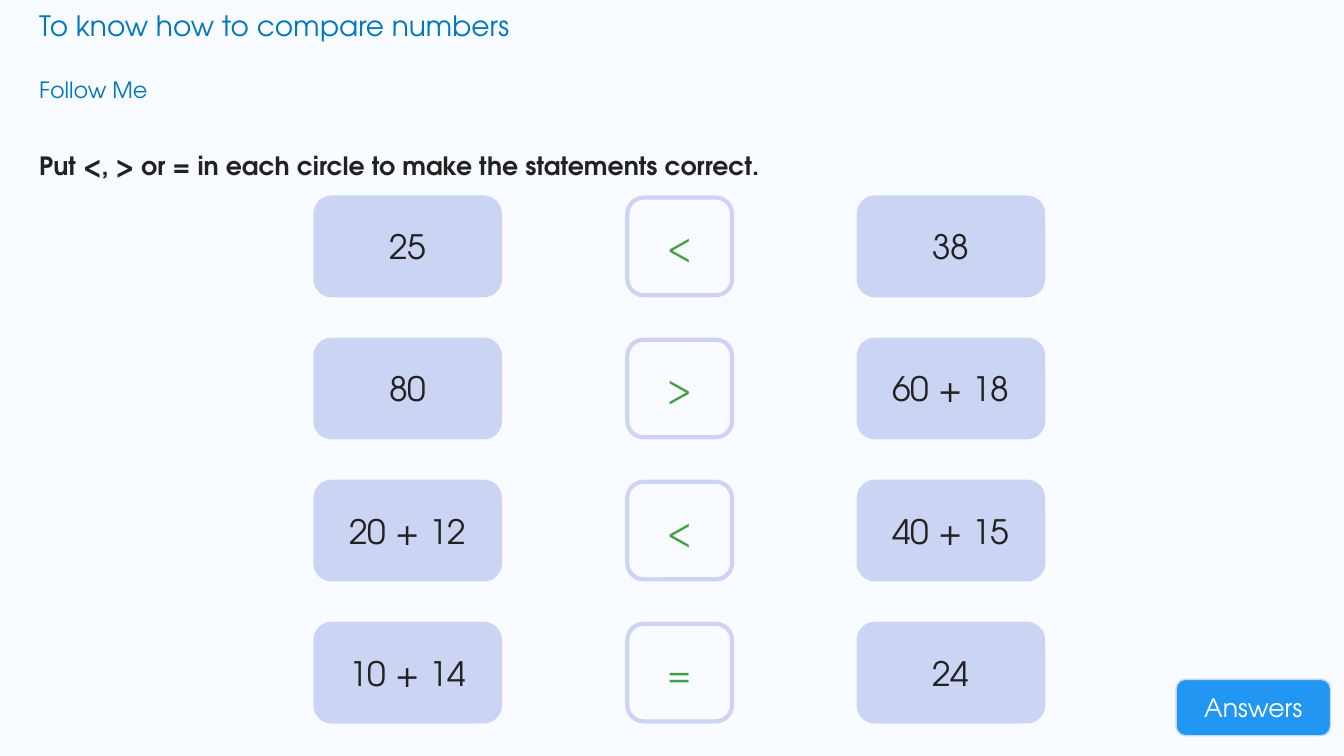
import dataclasses

import pptx
import pptx.dml.color
import pptx.enum.shapes
import pptx.enum.text
import pptx.util
from pptx.util import Cm


@dataclasses.dataclass(frozen=True)
class Theme:
    font: str = "TeX Gyre Adventor"
    background: str = "F8FBFF"
    heading: str = "0277BD"
    ink: str = "222222"
    card: str = "CCD4F4"
    sign: str = "43A047"
    button: str = "2196F3"
    button_text: str = "FFFFFF"
    title_size: int = 20
    subtitle_size: int = 16
    body_size: int = 18
    card_size: int = 24


THEME = Theme()
STATEMENTS = [
    ("25", "<", "38"),
    ("80", ">", "60 + 18"),
    ("20 + 12", "<", "40 + 15"),
    ("10 + 14", "=", "24"),
]
GRID_TOP, ROW_STEP, CARD_HEIGHT = 4.98, 3.58, 2.46
LEFT_X, SIGN_X, RIGHT_X = 7.95, 15.81, 21.64
CARD_WIDTH, SIGN_WIDTH = 4.65, 2.64
TEXT_LEFT = 0.74


def rgb(color):
    return pptx.dml.color.RGBColor.from_string(color)


def write_text(shape, text, *, size, color, bold=False, centered=False, line_spacing=None):
    """Fill a shape with one formatted paragraph."""
    frame = shape.text_frame
    frame.word_wrap = True
    anchors = pptx.enum.text.MSO_ANCHOR
    frame.vertical_anchor = anchors.MIDDLE if centered else anchors.TOP
    paragraph = frame.paragraphs[0]
    alignments = pptx.enum.text.PP_ALIGN
    paragraph.alignment = alignments.CENTER if centered else alignments.LEFT
    if line_spacing:
        paragraph.line_spacing = line_spacing
    run = paragraph.add_run()
    run.text = text
    run.font.name = THEME.font
    run.font.size = pptx.util.Pt(size)
    run.font.bold = bold
    run.font.color.rgb = rgb(color)


def add_label(slide, text, top, width, height, **text_format):
    box = slide.shapes.add_textbox(Cm(TEXT_LEFT), Cm(top), Cm(width), Cm(height))
    write_text(box, text, **text_format)


def add_card(slide, text, left, top, width, height, *, fill=None, line_width=3, **text_format):
    """Add a rounded box with centred text; without a fill it is an outline."""
    card = slide.shapes.add_shape(
        pptx.enum.shapes.MSO_SHAPE.ROUNDED_RECTANGLE,
        Cm(left), Cm(top), Cm(width), Cm(height),
    )
    card.shadow.inherit = False
    if fill:
        card.fill.solid()
        card.fill.fore_color.rgb = rgb(fill)
    else:
        card.fill.background()
    card.line.color.rgb = rgb(THEME.card)
    card.line.width = pptx.util.Pt(line_width)
    write_text(card, text, centered=True, **text_format)


def add_statement(slide, row, left_text, sign, right_text):
    top = GRID_TOP + row * ROW_STEP
    for text, left in ((left_text, LEFT_X), (right_text, RIGHT_X)):
        add_card(slide, text, left, top, CARD_WIDTH, CARD_HEIGHT,
                 fill=THEME.card, size=THEME.card_size, color=THEME.ink)
    add_card(slide, sign, SIGN_X, top, SIGN_WIDTH, CARD_HEIGHT,
             size=THEME.card_size, color=THEME.sign)


def main():
    presentation = pptx.Presentation()
    presentation.slide_width = Cm(33.87)
    presentation.slide_height = Cm(19.05)
    slide = presentation.slides.add_slide(presentation.slide_layouts[6])
    slide.background.fill.solid()
    slide.background.fill.fore_color.rgb = rgb(THEME.background)

    # Headings and instruction
    add_label(slide, "To know how to compare numbers", 0.1, 31.34, 1.12,
              size=THEME.title_size, color=THEME.heading)
    add_label(slide, "Follow Me", 1.8, 7.54, 1.17,
              size=THEME.subtitle_size, color=THEME.heading)
    add_label(slide, "Put <, > or = in each circle to make the statements correct.",
              3.28, 32.61, 1.42, size=THEME.body_size, color=THEME.ink,
              bold=True, line_spacing=1.5)

    # Comparison statements
    for row, statement in enumerate(STATEMENTS):
        add_statement(slide, row, *statement)

    # Answers button
    add_card(slide, "Answers", 29.64, 17.12, 3.89, 1.42, fill=THEME.button,
             line_width=1, size=THEME.body_size, color=THEME.button_text)

    presentation.save("out.pptx")


if __name__ == "__main__":
    main()
